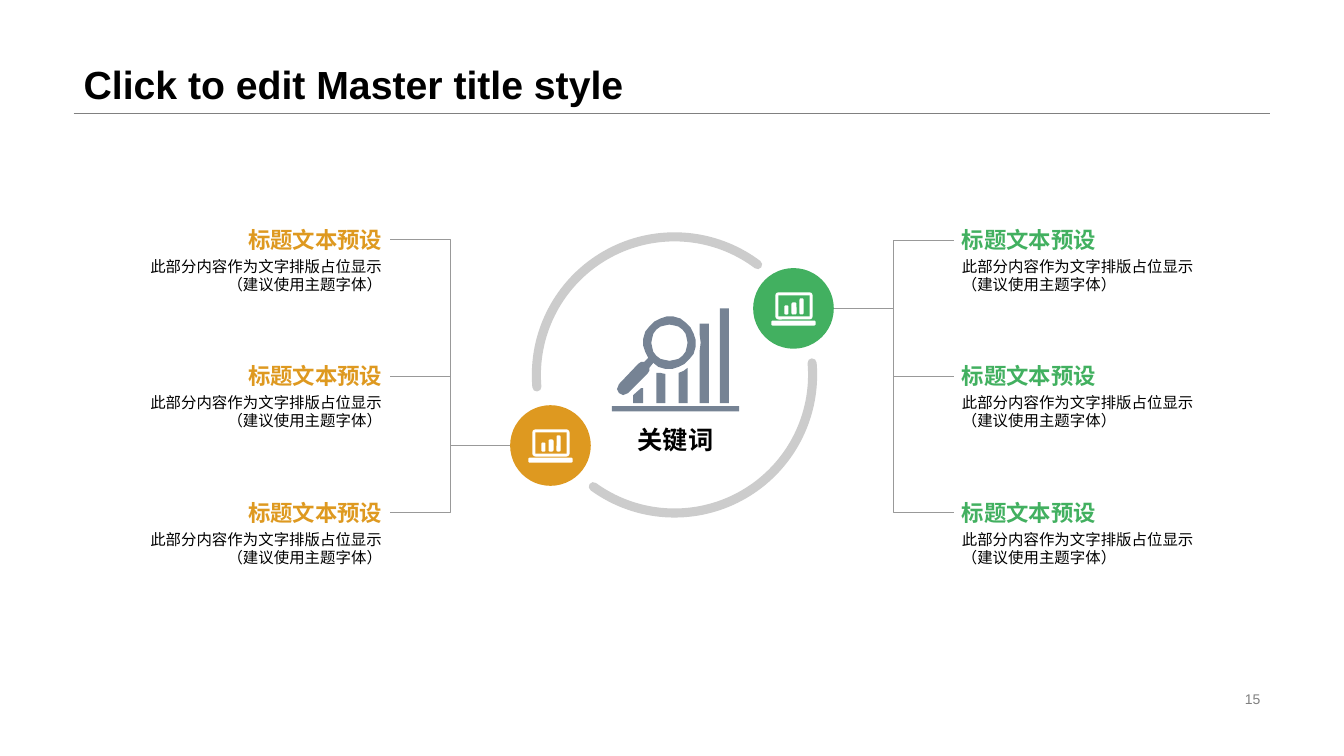
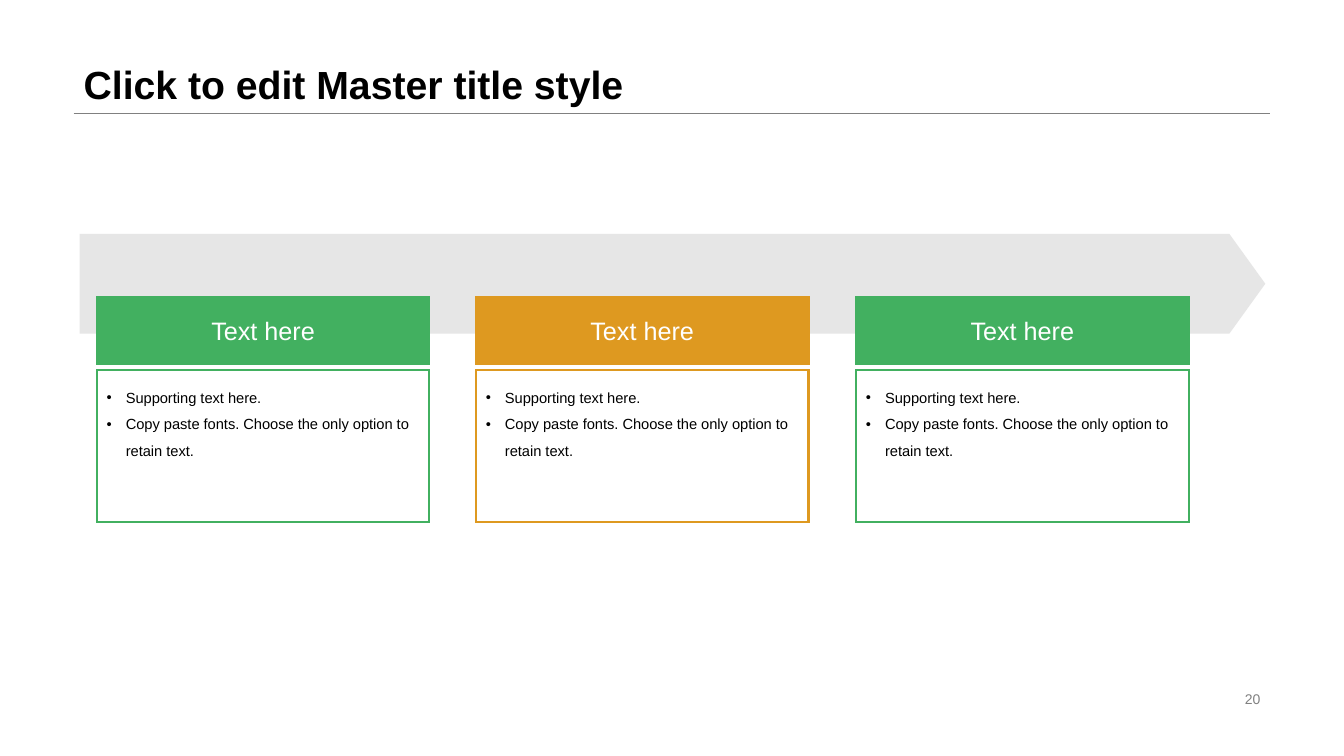
from math import cos, radians, sin
from lxml.etree import SubElement
from pptx import Presentation
from pptx.dml.color import RGBColor
from pptx.enum.shapes import MSO_CONNECTOR, MSO_SHAPE
from pptx.enum.text import MSO_ANCHOR, MSO_AUTO_SIZE, PP_ALIGN
from pptx.oxml.ns import qn
from pptx.util import Pt

PX = 9144
FONT = "Arial"
BLACK = RGBColor(0x00, 0x00, 0x00)
WHITE = RGBColor(0xFF, 0xFF, 0xFF)
GREEN = RGBColor(0x42, 0xB0, 0x60)
ORANGE = RGBColor(0xDE, 0x99, 0x20)
SLATE = RGBColor(0x76, 0x83, 0x94)
LIGHT_GRAY = RGBColor(0xCC, 0xCC, 0xCC)
LINE_GRAY = RGBColor(0x99, 0x99, 0x99)
DARK_GRAY = RGBColor(0x80, 0x80, 0x80)


def add_shape(slide, kind, box, fill=None, line=None, width=0):
    shape = slide.shapes.add_shape(kind, *[value * PX for value in box])
    shape.shadow.inherit = False
    if fill is None:
        shape.fill.background()
    else:
        shape.fill.solid()
        shape.fill.fore_color.rgb = fill
    if line is None:
        shape.line.fill.background()
    else:
        shape.line.color.rgb = line
        shape.line.width = Pt(width)
        SubElement(shape._element.spPr.find(qn("a:ln")), qn("a:miter"), lim="800000")
    return shape


def write_text(shape, lines, size, color, bold=False, paragraph_format={}, frame_format={}):
    frame = shape.text_frame
    for name, value in {"word_wrap": True, **frame_format}.items():
        setattr(frame, name, value)
    for index, text in enumerate(lines):
        paragraph = frame.paragraphs[0] if index == 0 else frame.add_paragraph()
        for name, value in paragraph_format.items():
            setattr(paragraph, name, value)
        run = paragraph.add_run()
        run.text = text
        font_format = {"name": FONT, "size": Pt(size), "bold": bold}
        for name, value in font_format.items():
            setattr(run.font, name, value)
        run.font.color.rgb = color
    return frame


presentation = Presentation()
presentation.slide_width = 1333 * PX
presentation.slide_height = 750 * PX
title_layout = presentation.slide_layouts[5]

lines = []
slides = []
for page_number in ("15", "20"):
    slide = presentation.slides.add_slide(title_layout)
    slides.append(slide)
    title = slide.shapes.title
    title_place = {"left": 73, "top": 0, "width": 1187, "height": 112}
    for name, value in title_place.items():
        setattr(title, name, value * PX)
    write_text(
        title, ["Click to edit Master title style"], 28, BLACK, True,
        {"alignment": PP_ALIGN.LEFT, "line_spacing": 0.9},
        {"vertical_anchor": MSO_ANCHOR.BOTTOM, "auto_size": MSO_AUTO_SIZE.NONE},
    )
    number_box = slide.shapes.add_textbox(942 * PX, 682 * PX, 318 * PX, 23 * PX)
    write_text(
        number_box, [page_number], 10, DARK_GRAY, False,
        {"alignment": PP_ALIGN.RIGHT}, {"vertical_anchor": MSO_ANCHOR.MIDDLE},
    )
    lines.append((slide, MSO_CONNECTOR.STRAIGHT, (73, 112), (1260, 112), DARK_GRAY, 0.25))

keyword_slide, process_slide = slides

for start_angle, end_angle in ((175, 307), (355, 126)):
    arc = add_shape(keyword_slide, MSO_SHAPE.ARC, (532, 235, 274, 274), None, LIGHT_GRAY, 6.5)
    arc.adjustments[0] = start_angle * 0.6
    arc.adjustments[1] = end_angle * 0.6
    arc._element.spPr.find(qn("a:ln")).set("cap", "rnd")

lens_rim, lens_hole = [
    [(664 + radius * cos(radians(angle)), 340 + radius * sin(radians(angle)))
     for angle in angles]
    for radius, angles in ((26, range(144, 490, 15)), (18, range(360, 0, -15)))
]
handle = [
    (644, 365), (644, 368), (642, 371), (623, 390), (618, 392), (614, 390),
    (612, 386), (614, 381), (633, 361), (636, 359), (639, 359),
]
chart_outlines = [
    [(607, 403), (733, 403), (733, 408), (607, 408)],
    [(628, 392), (636, 385), (638, 385), (638, 400), (628, 400)],
    [(651, 370), (655, 370), (660, 371), (660, 400), (651, 400)],
    [(673, 370), (678, 368), (682, 365), (682, 400), (673, 400)],
    [(694, 321), (703, 321), (703, 400), (694, 400), (694, 348), (695, 340), (694, 332)],
    [(714, 306), (723, 306), (723, 400), (714, 400)],
    lens_rim + handle,
    lens_hole,
]
builder = keyword_slide.shapes.build_freeform(*chart_outlines[0][0], scale=PX)
builder.add_line_segments(chart_outlines[0][1:])
for outline in chart_outlines[1:]:
    builder.move_to(*outline[0])
    builder.add_line_segments(outline[1:])
chart_icon = builder.convert_to_shape()
chart_icon.shadow.inherit = False
chart_icon.fill.solid()
chart_icon.fill.fore_color.rgb = SLATE
chart_icon.line.fill.background()

keyword_box = keyword_slide.shapes.add_textbox(622 * PX, 416 * PX, 96 * PX, 40 * PX)
write_text(
    keyword_box, ["关键词"], 18, BLACK, True, {"alignment": PP_ALIGN.CENTER},
    {"word_wrap": False, "auto_size": MSO_AUTO_SIZE.SHAPE_TO_FIT_TEXT},
)

label_frame = {
    "margin_left": 8 * PX, "margin_right": 8 * PX, "margin_top": 0, "margin_bottom": 0,
}
sides = [
    (ORANGE, (506, 402), 119, PP_ALIGN.RIGHT, 387, 506),
    (GREEN, (747, 266), 946, PP_ALIGN.LEFT, 946, 827),
]
for color, (circle_left, circle_top), label_left, alignment, label_edge, circle_edge in sides:
    add_shape(keyword_slide, MSO_SHAPE.OVAL, (circle_left, circle_top, 80, 80), color)
    laptop_parts = [
        (MSO_SHAPE.ROUNDED_RECTANGLE, (22, 24, 37, 27), WHITE),
        (MSO_SHAPE.RECTANGLE, (25, 27, 31, 21), color),
        (MSO_SHAPE.ROUNDED_RECTANGLE, (31, 37, 4, 9), WHITE),
        (MSO_SHAPE.ROUNDED_RECTANGLE, (38, 34, 5, 12), WHITE),
        (MSO_SHAPE.ROUNDED_RECTANGLE, (46, 30, 4, 16), WHITE),
        (MSO_SHAPE.ROUNDED_RECTANGLE, (18, 52, 44, 5), WHITE),
    ]
    for kind, (left, top, width, height), fill in laptop_parts:
        box = (circle_left + left, circle_top + top, width, height)
        part = add_shape(keyword_slide, kind, box, fill)
        if kind == MSO_SHAPE.ROUNDED_RECTANGLE:
            part.adjustments[0] = 0.12 if height > 20 else 0.3
    for row in range(3):
        label_top = 224 + row * 271 // 2
        heading_box = keyword_slide.shapes.add_textbox(
            label_left * PX, label_top * PX, 268 * PX, 27 * PX)
        write_text(
            heading_box, ["标题文本预设"], 16, color, True,
            {"alignment": alignment}, label_frame,
        )
        detail_box = keyword_slide.shapes.add_textbox(
            label_left * PX, (label_top + 27) * PX, 268 * PX, 52 * PX)
        detail_frame = write_text(
            detail_box, ["此部分内容作为文字排版占位显示", "（建议使用主题字体）"], 11, BLACK, False,
            {"alignment": alignment}, label_frame,
        )
        detail_frame.paragraphs[0].line_spacing = 1.2
        begin = (label_edge, 238 + row * 135)
        end = (circle_edge, circle_top + 40)
        lines.append((keyword_slide, MSO_CONNECTOR.ELBOW, begin, end, LINE_GRAY, 0.5))

band = add_shape(process_slide, MSO_SHAPE.PENTAGON, (79, 232, 1176, 99), LIGHT_GRAY)
band.adjustments[0] = 0.36
band_color = band._element.spPr.find(qn("a:solidFill")).find(qn("a:srgbClr"))
SubElement(band_color, qn("a:alpha"), val="48000")

header_frame = {"vertical_anchor": MSO_ANCHOR.MIDDLE}
for side in ("left", "right", "top", "bottom"):
    header_frame["margin_" + side] = 5 * PX
list_frame = {
    "vertical_anchor": MSO_ANCHOR.TOP, "margin_left": 10 * PX, "margin_right": 10 * PX,
    "margin_top": 10 * PX, "margin_bottom": 5 * PX,
}
supporting_text = [
    "Supporting text here.",
    "Copy paste fonts. Choose the only option to retain text.",
]
for column, color in enumerate((GREEN, ORANGE, GREEN)):
    left = 96 + column * 753 // 2
    list_box = add_shape(
        process_slide, MSO_SHAPE.RECTANGLE, (left, 367, 330, 151), None, color, 1.5)
    frame = write_text(
        list_box, supporting_text, 10.5, BLACK, False,
        {"alignment": PP_ALIGN.LEFT, "line_spacing": 1.5}, list_frame,
    )
    for paragraph in frame.paragraphs:
        properties = paragraph._p.get_or_add_pPr()
        properties.set("marL", str(19 * PX))
        properties.set("indent", str(-19 * PX))
        SubElement(properties, qn("a:buFont"), typeface=FONT)
        SubElement(properties, qn("a:buChar"), char="•")
        tab_list = SubElement(properties, qn("a:tabLst"))
        SubElement(tab_list, qn("a:tab"), pos=str(25 * PX), algn="l")
    header = add_shape(
        process_slide, MSO_SHAPE.RECTANGLE, (left, 295, 330, 66), color, color, 1.5)
    write_text(
        header, ["Text here"], 18, WHITE, False,
        {"alignment": PP_ALIGN.CENTER}, header_frame,
    )

for slide, kind, begin, end, color, width in lines:
    points = [value * PX for value in begin + end]
    connector = slide.shapes.add_connector(kind, *points)
    connector.line.color.rgb = color
    connector.line.width = Pt(width)
    SubElement(connector._element.spPr, qn("a:effectLst"))

presentation.save("out.pptx")
